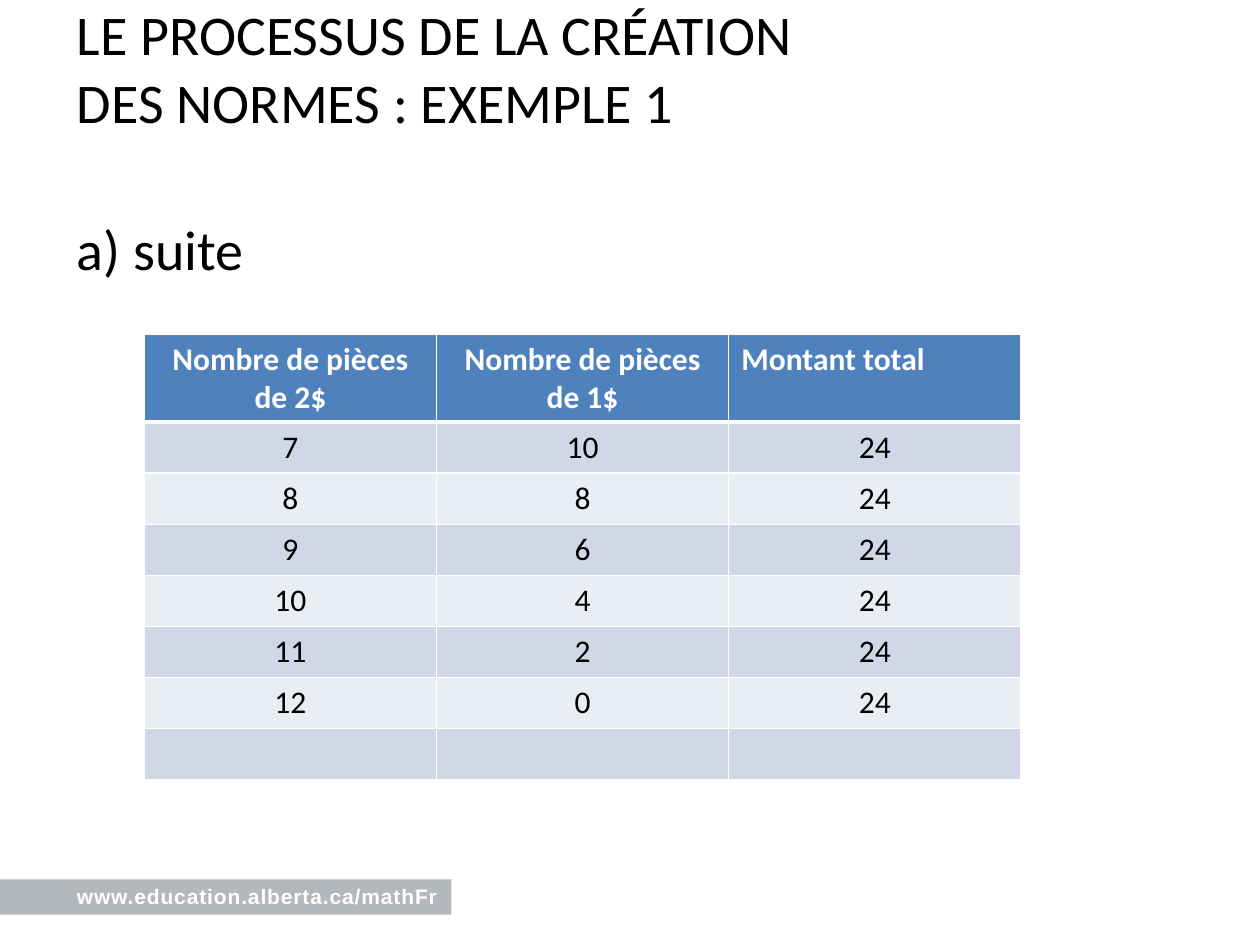
from dataclasses import dataclass

from lxml.etree import SubElement
from pptx import Presentation
from pptx.dml.color import RGBColor as Rgb
from pptx.enum.shapes import MSO_SHAPE as Shape
from pptx.enum.text import PP_ALIGN as Align
from pptx.oxml.ns import qn
from pptx.util import Cm, Pt


@dataclass(frozen=True)
class Theme:
    white: Rgb = Rgb(0xFF, 0xFF, 0xFF)
    black: Rgb = Rgb(0, 0, 0)
    gray: Rgb = Rgb(0x6A, 0x73, 0x7B)
    header: Rgb = Rgb(0x4F, 0x81, 0xBD)
    bands: tuple = (Rgb(0xD0, 0xD8, 0xE8), Rgb(0xE9, 0xED, 0xF4))
    heading_size: Pt = Pt(32)
    table_size: Pt = Pt(18)
    footer_size: Pt = Pt(12)


theme = Theme()


def style_text(paragraph, size, color, bold=False, name="Calibri"):
    for run in paragraph.runs:
        run.font.name = name
        run.font.size = size
        run.font.bold = bold
        run.font.color.rgb = color


def add_text(slide, text, left, top, width, height):
    text_frame = slide.shapes.add_textbox(Cm(left), Cm(top), Cm(width), Cm(height)).text_frame
    text_frame.word_wrap = True
    text_frame.margin_left = text_frame.margin_right = 0
    text_frame.margin_top = text_frame.margin_bottom = 0
    text_frame.text = text
    return text_frame.paragraphs[0]


presentation = Presentation()
presentation.slide_width = Cm(25.4)
presentation.slide_height = Cm(19.05)
slide = presentation.slides.add_slide(presentation.slide_layouts[6])

footer_bar = slide.shapes.add_shape(Shape.RECTANGLE, 0, Cm(17.73), Cm(9.1), Cm(0.71))
footer_bar.shadow.inherit = False
footer_bar.fill.solid()
footer_bar.fill.fore_color.rgb = theme.gray
footer_bar.line.fill.background()
bar_color = footer_bar.fill._xPr.find(qn("a:solidFill"))[0]
SubElement(bar_color, qn("a:alpha"), val="50000")

address = add_text(slide, "www.education.alberta.ca/mathFr", 1.55, 17.81, 7.55, 0.51)
style_text(address, theme.footer_size, theme.white, True, "Arial")
address.runs[0].font._element.set("spc", "50")

title = "LE PROCESSUS DE LA CRÉATION DES NORMES : EXEMPLE 1"
for text, top, width, height in ((title, 0, 16.4, 2.72), ("a) suite", 4.32, 22.35, 12.6)):
    paragraph = add_text(slide, text, 1.55, top, width, height)
    style_text(paragraph, theme.heading_size, theme.black)

rows = [("Nombre de pièces de 2$", "Nombre de pièces de 1$", "Montant total")]
rows += [(str(twos), str(24 - 2 * twos), "24") for twos in range(7, 13)]
rows.append(("", "", ""))
header_height, row_height, column_width = Cm(1.78), Cm(1.03), Cm(5.89)

table = slide.shapes.add_table(
    len(rows), 3, Cm(2.91), Cm(6.73), 3 * column_width, header_height + 7 * row_height
).table
for column in table.columns:
    column.width = column_width

for row_index, values in enumerate(rows):
    is_header = row_index == 0
    table.rows[row_index].height = header_height if is_header else row_height
    for column_index, value in enumerate(values):
        cell = table.cell(row_index, column_index)
        cell.text = value
        paragraph = cell.text_frame.paragraphs[0]
        if value != "Montant total":
            paragraph.alignment = Align.CENTER
        style_text(paragraph, theme.table_size, theme.white if is_header else theme.black, is_header)

        properties = cell._tc.get_or_add_tcPr()
        for side in ("lnL", "lnR", "lnT", "lnB"):
            thick = (row_index, side) in ((0, "lnB"), (1, "lnT"))
            border = SubElement(properties, qn(f"a:{side}"), w=str(Pt(3 if thick else 1)))
            border_fill = SubElement(border, qn("a:solidFill"))
            SubElement(border_fill, qn("a:srgbClr"), val=str(theme.white))
        cell.fill.solid()
        cell.fill.fore_color.rgb = theme.header if is_header else theme.bands[(row_index - 1) % 2]

presentation.save("out.pptx")
